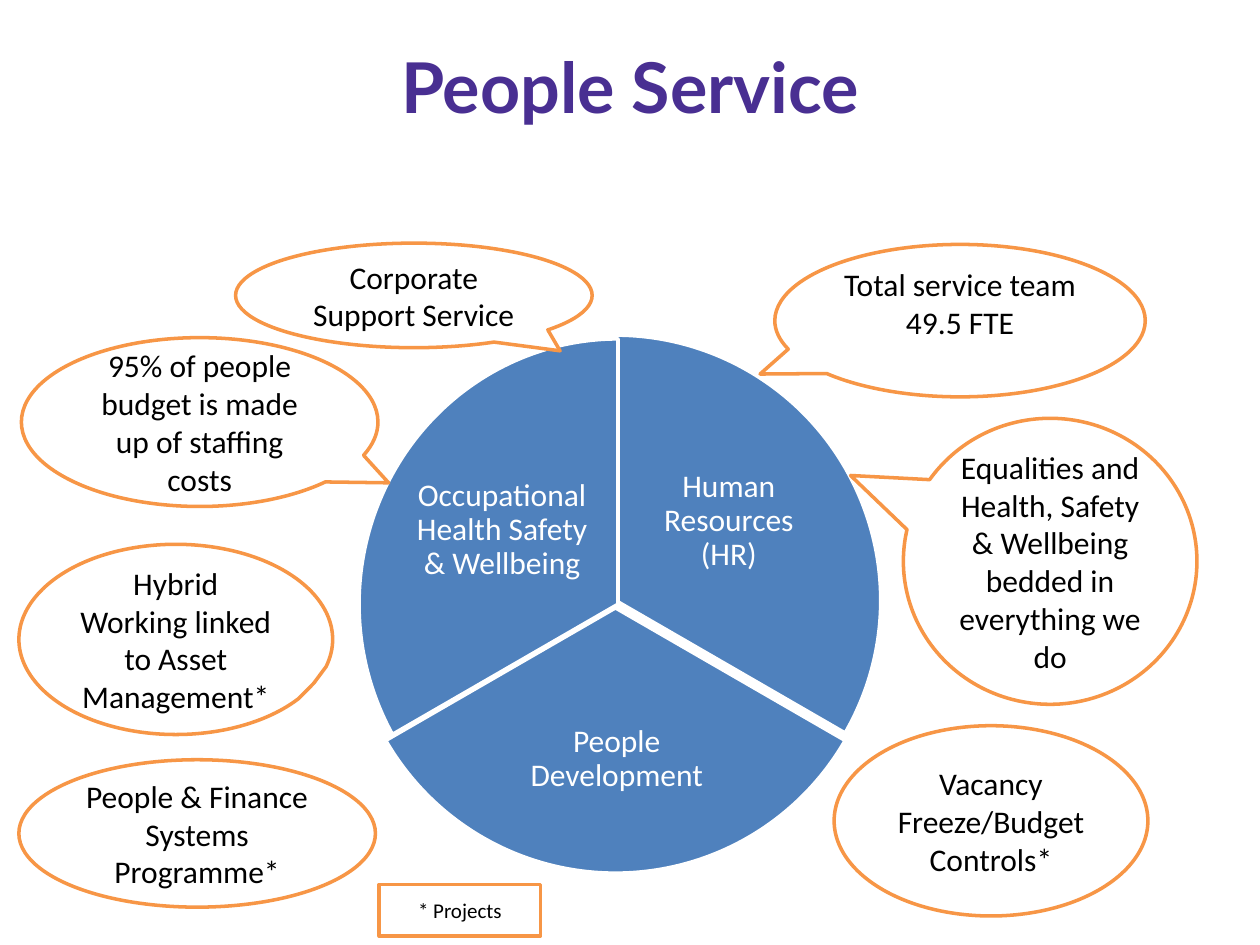
from pptx import Presentation
from pptx import util as u
from pptx.dml.color import RGBColor
from pptx.enum import shapes, text

PURPLE = RGBColor(0x49, 0x2F, 0x92)
BLUE = RGBColor(0x4F, 0x81, 0xBD)
ORANGE = RGBColor(0xF7, 0x96, 0x46)
WHITE = RGBColor(255, 255, 255)
BLACK = RGBColor(0, 0, 0)

KIND = shapes.MSO_SHAPE
CALL = KIND.OVAL_CALLOUT
INSET = (0.1, 0.05, 0.1, 0.05)
TIGHT = (0.1, 0, 0.1, 0)
THIN = (0, 0.03, 0, 0.03)

# Start and end angle in degrees, slice box, words, words box
SLICES = [
    (270, 30, (2.78, 2.66, 4.21, 4.21), "Human Resources (HR)", (5.07, 3.44, 1.43, 1.4)),
    (30, 150, (2.78, 2.72, 4.21, 4.21), "People Development", (3.94, 5.38, 1.91, 1.3)),
    (150, 270, (2.85, 2.69, 4.11, 4.21), "Occupational Health Safety & Wellbeing",
     (3.26, 3.51, 1.45, 1.4)),
]

# Words, kind, box, pointer tip, insets, size
NOTES = [
    ("95% of people budget is made up of staffing costs", CALL,
     (0.17, 2.68, 2.83, 1.34), (0.53, 0.36), INSET, 18),
    ("Corporate Support Service", CALL,
     (1.87, 1.93, 2.83, 0.83), (0.41, 0.53), TIGHT, 18),
    ("Total service team 49.5 FTE", CALL,
     (6.15, 1.94, 2.94, 1.21), (-0.54, 0.35), (0.1, 0, 0.1, 0.28), 18),
    ("Equalities and Health, Safety & Wellbeing bedded in everything we do", CALL,
     (7.17, 3.32, 2.33, 2.27), (-0.68, -0.3), INSET, 18),
    ("Hybrid Working linked to Asset Management*", CALL,
     (0.15, 4.32, 2.49, 1.51), (0.44, 0.23), INSET, 18),
    ("Vacancy Freeze/Budget Controls*", KIND.OVAL,
     (6.62, 5.76, 2.49, 1.51), (), INSET, 18),
    ("People & Finance Systems Programme*", KIND.OVAL,
     (0.15, 6.03, 2.83, 1.17), (), INSET, 18),
    ("* Projects", KIND.RECTANGLE, (3.01, 7.02, 1.28, 0.41), (), INSET, 12),
]


def write(shape, words, size=18, color=BLACK, face="Calibri", bold=False,
          inset=INSET, anchor=text.MSO_ANCHOR.MIDDLE, space=1.0):
    frame = shape.text_frame
    frame.word_wrap = True
    frame.vertical_anchor = anchor
    (frame.margin_left, frame.margin_top,
     frame.margin_right, frame.margin_bottom) = map(u.Inches, inset)
    para = frame.paragraphs[0]
    para.alignment = text.PP_ALIGN.CENTER
    para.line_spacing = space
    run = para.add_run()
    run.text = words
    font = run.font
    font.name, font.size, font.bold = face, u.Pt(size), bold
    font.color.rgb = color


def draw(slide, kind, box, fill, line, adjust=()):
    shape = slide.shapes.add_shape(kind, *map(u.Inches, box))
    shape.shadow.inherit = False
    shape.fill.solid()
    shape.fill.fore_color.rgb = fill
    shape.line.color.rgb = line
    shape.line.width = u.Pt(2)
    for i, value in enumerate(adjust):
        shape.adjustments[i] = value
    return shape


def label(slide, box, words, **style):
    write(slide.shapes.add_textbox(*map(u.Inches, box)), words, **style)


def main():
    deck = Presentation()
    deck.slide_width, deck.slide_height = u.Inches(10), u.Inches(7.5)
    slide = deck.slides.add_slide(deck.slide_layouts[6])
    label(slide, (0.5, 0.3, 9, 1.48), "People Service", size=40, color=PURPLE,
          face="Lato", bold=True, anchor=text.MSO_ANCHOR.TOP)
    for start, end, box, words, place in SLICES:
        # A pie angle is stored in 60000ths of a degree, an adjustment in 100000ths
        draw(slide, KIND.PIE, box, BLUE, WHITE, (start * 0.6, end * 0.6))
        label(slide, place, words, color=WHITE, inset=THIN, space=0.9)
    for words, kind, box, tip, inset, size in NOTES:
        write(draw(slide, kind, box, WHITE, ORANGE, tip), words, size=size, inset=inset)
    deck.save("out.pptx")


if __name__ == "__main__":
    main()
